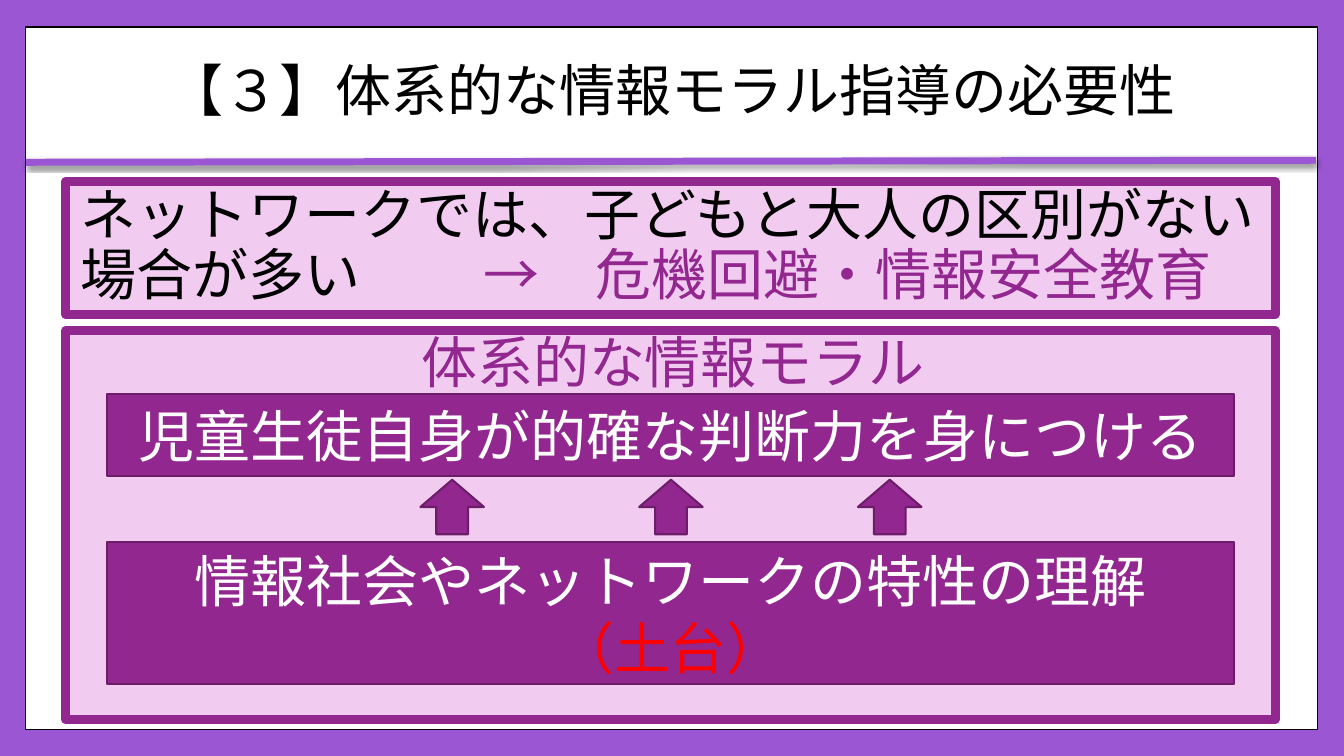
from lxml.etree import SubElement
from pptx import Presentation
from pptx.dml.color import RGBColor
from pptx.enum.shapes import MSO_CONNECTOR, MSO_SHAPE
from pptx.enum.text import MSO_ANCHOR, PP_ALIGN
from pptx.oxml.ns import qn
from pptx.util import Inches, Pt

COLORS = {
    "frame": "9B57D3", "paper": "FFFFFF", "ink": "000000", "pale": "F1CCF0",
    "plum": "92278F", "edge": "6C1D6A", "alert": "FF0000",
}

# Content: each paragraph is a list of (text, colour) spans
TITLE = [[("【３】体系的な情報モラル指導の必要性", "ink")]]
RISK = [[("ネットワークでは、子どもと大人の区別がない場合が多い\t", "ink"),
         ("→　危機回避・情報安全教育", "plum")]]
SYSTEM = [[("体系的な情報モラル", "plum")]]
GOAL = [[("児童生徒自身が的確な判断力を身につける", "paper")]]
BASE = [[("情報社会やネットワークの特性の理解", "paper")], [("（土台）", "alert")]]

# Styles: fill, line colour, line width in points
PAPER = ("paper", "ink", 1)
PANEL = ("pale", "plum", 6)
BLOCK = ("plum", "edge", 1.5)

# Layout in inches: left, top, width, height
PANELS = [
    ((0.65, 1.8, 12, 1.32), RISK, {"alignment": PP_ALIGN.LEFT}, MSO_ANCHOR.MIDDLE),
    ((0.65, 3.28, 12, 3.86), SYSTEM, {"alignment": PP_ALIGN.CENTER}, MSO_ANCHOR.TOP),
]
BLOCKS = [((1.06, 3.91, 11.18, 0.81), GOAL), ((1.06, 5.38, 11.18, 1.41), BASE)]
ARROW_LEFT, ARROW_STEP, ARROW_COUNT = 4.17, 2.17, 3
TAB_STOP = 4


def color(name):
    return RGBColor.from_string(COLORS[name])


def add_box(page, kind, place, style):
    fill, line, width = style
    box = page.shapes.add_shape(kind, *map(Inches, place))
    box.shadow.inherit = False
    box.fill.solid()
    box.fill.fore_color.rgb = color(fill)
    box.line.color.rgb = color(line)
    box.line.width = Pt(width)
    return box


def write(box, paragraphs, font="Arial", anchor=MSO_ANCHOR.MIDDLE, **formats):
    frame = box.text_frame
    frame.word_wrap = True
    frame.vertical_anchor = anchor
    for index, spans in enumerate(paragraphs):
        para = frame.add_paragraph() if index else frame.paragraphs[0]
        for name, value in {"alignment": PP_ALIGN.CENTER, **formats}.items():
            setattr(para, name, value)
        for text, ink in spans:
            span = para.add_run()
            span.text = text
            for name, value in {"size": Pt(40), "name": font}.items():
                setattr(span.font, name, value)
            span.font.color.rgb = color(ink)


def add_rule(page):
    rule = page.shapes.add_connector(
        MSO_CONNECTOR.STRAIGHT, *map(Inches, (0.26, 1.61, 13.05, 1.59)))
    rule.line.color.rgb = color("frame")
    rule.line.width = Pt(5)
    effects = SubElement(rule._element.spPr, qn("a:effectLst"))
    shadow = SubElement(effects, qn("a:outerShdw"), blurRad=str(Pt(3)),
                        dist=str(Pt(2)), dir="5400000", rotWithShape="0")
    tint = SubElement(shadow, qn("a:srgbClr"), val=COLORS["ink"])
    SubElement(tint, qn("a:alpha"), val="45000")


def main():
    deck = Presentation()
    deck.slide_width, deck.slide_height = Inches(13.33), Inches(7.5)
    page = deck.slides.add_slide(deck.slide_layouts[6])
    page.background.fill.solid()
    page.background.fill.fore_color.rgb = color("frame")

    # White sheet, rule and title
    add_box(page, MSO_SHAPE.RECTANGLE, (0.25, 0.27, 12.82, 6.97), PAPER)
    add_rule(page)
    title = page.shapes.add_textbox(*map(Inches, (0.26, 0.36, 12.8, 1.14)))
    write(title, TITLE, font="Karla", line_spacing=0.9)

    # Pale panels with rounded border corners
    for place, paragraphs, formats, anchor in PANELS:
        panel = add_box(page, MSO_SHAPE.RECTANGLE, place, PANEL)
        SubElement(panel.line._get_or_add_ln(), qn("a:round"))
        panel.text_frame.margin_top = Inches(0.04)
        write(panel, paragraphs, anchor=anchor, line_spacing=0.9, **formats)
        for para in panel.text_frame.paragraphs:
            settings = para._p.get_or_add_pPr()
            settings.set("marL", str(Inches(0.05)))
            stops = SubElement(settings, qn("a:tabLst"))
            SubElement(stops, qn("a:tab"), pos=str(Inches(TAB_STOP)), algn="l")

    # Foundation and goal, joined by upward arrows
    for place, paragraphs in BLOCKS:
        write(add_box(page, MSO_SHAPE.RECTANGLE, place, BLOCK), paragraphs)
    for index in range(ARROW_COUNT):
        left = ARROW_LEFT + index * ARROW_STEP
        add_box(page, MSO_SHAPE.UP_ARROW, (left, 4.76, 0.63, 0.54), BLOCK)

    deck.save("out.pptx")


if __name__ == "__main__":
    main()
